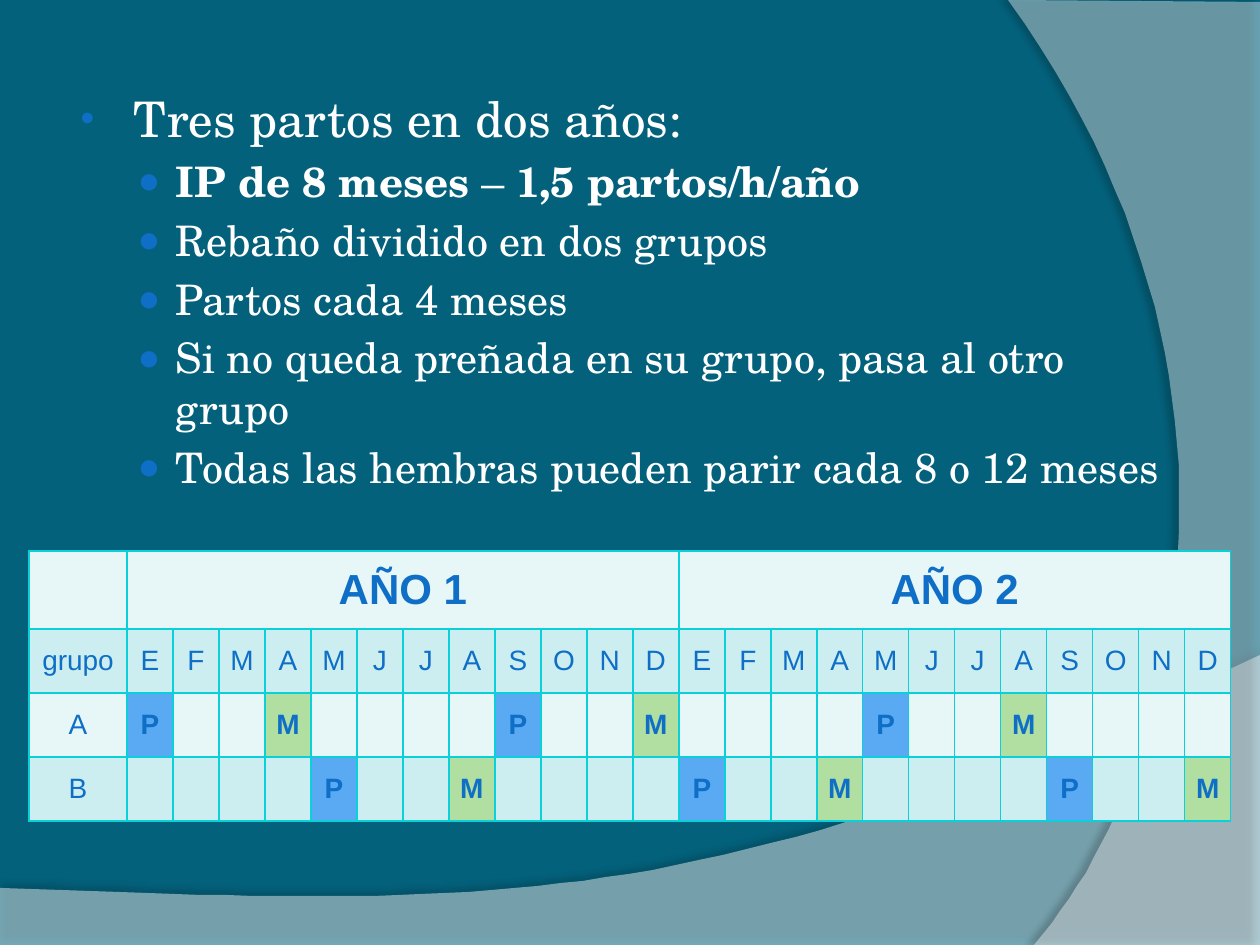
from lxml.etree import SubElement
from pptx import Presentation
from pptx.dml.color import RGBColor
from pptx.enum.text import MSO_ANCHOR, MSO_AUTO_SIZE, PP_ALIGN
from pptx.oxml.ns import qn
from pptx.util import Emu, Pt

SCALE = 914400 / 126  # EMU in one px
COLORS = {
    "background": "04617B", "white": "FFFFFF", "shadow": "000000",
    "blue": "0F6FC6", "border": "0BD0D9", "light": "E7F7F8",
    "band": "CCEEF1", "P": "59AAF2", "M": "B0DFA1",
}
BODY_FONT, TABLE_FONT = "TeX Gyre Schola", "Arial"


def px(length):
    return Emu(round(length * SCALE))


def color(name):
    return RGBColor.from_string(COLORS[name])


def child(parent, tag, **attributes):
    return SubElement(parent, qn(tag), {key: str(value) for key, value in attributes.items()})


def curve(start, control_1, control_2, end, steps=48):
    """Points along a cubic curve, without the start point."""
    points = []
    for step in range(1, steps + 1):
        t = step / steps
        weights = ((1 - t) ** 3, 3 * t * (1 - t) ** 2, 3 * t * t * (1 - t), t ** 3)
        corners = (start, control_1, control_2, end)
        points.append(tuple(sum(w * c[axis] for w, c in zip(weights, corners)) for axis in (0, 1)))
    return points


class SlideBuilder:
    def __init__(self, page):
        self.page = page
        page.background.fill.solid()
        page.background.fill.fore_color.rgb = color("background")

    def wave(self, points, opacity, shadow_opacity, distance, direction):
        builder = self.page.shapes.build_freeform(*points[0], scale=SCALE)
        builder.add_line_segments(points[1:], close=True)
        shape = builder.convert_to_shape()
        shape.shadow.inherit = False
        shape.line.fill.background()
        shape.fill.solid()
        shape.fill.fore_color.rgb = color("white")
        properties = shape.element.spPr
        fill_color = properties.find(qn("a:solidFill")).find(qn("a:srgbClr"))
        child(fill_color, "a:alpha", val=opacity * 1000)
        shadow = child(properties.find(qn("a:effectLst")), "a:outerShdw", blurRad=Pt(4),
                       dist=Pt(distance), dir=direction * 60000, algn="ctr", rotWithShape=0)
        shadow_color = child(shadow, "a:srgbClr", val=COLORS["shadow"])
        child(shadow_color, "a:alpha", val=shadow_opacity * 1000)

    def span(self, para, text, size, font, color_name, bold=False):
        span = para.add_run()
        span.text = text
        span.font.size = Pt(size)
        span.font.name = font
        span.font.bold = bold
        span.font.color.rgb = color(color_name)

    def bullets(self, box, left, top, width, height, items):
        box.left, box.top, box.width, box.height = map(px, (left, top, width, height))
        tree = box.element.getparent()
        tree.append(box.element)  # in front of the waves
        frame = box.text_frame
        frame.word_wrap = True
        frame.auto_size = MSO_AUTO_SIZE.NONE
        frame.vertical_anchor = MSO_ANCHOR.TOP
        for index, (level, spans) in enumerate(items):
            para = frame.paragraphs[0] if index == 0 else frame.add_paragraph()
            size, indent, hanging, mark, percent = (
                (24, 100, 38, "●", 90) if level else (28, 58, 53, "•", 80))
            para.level = level
            para.space_before = Pt(size * 0.2 if index else 0)
            properties = para._p.get_or_add_pPr()
            properties.set("marL", str(px(indent)))
            properties.set("indent", str(-px(hanging)))
            child(child(properties, "a:buClr"), "a:srgbClr", val=COLORS["blue"])
            child(properties, "a:buSzPct", val=percent * 1000)
            child(properties, "a:buFont", typeface=TABLE_FONT)
            child(properties, "a:buChar", char=mark)
            for text, bold in spans:
                self.span(para, text, size, BODY_FONT, "white", bold)

    def cell(self, cell, fill, text="", size=16, bold=False):
        properties = cell._tc.get_or_add_tcPr()
        for side in ("a:lnL", "a:lnR", "a:lnT", "a:lnB"):
            line = child(properties, side, w=Pt(1))
            child(child(line, "a:solidFill"), "a:srgbClr", val=COLORS["border"])
        cell.fill.solid()
        cell.fill.fore_color.rgb = color(fill)
        cell.margin_left = cell.margin_right = 0
        cell.vertical_anchor = MSO_ANCHOR.MIDDLE
        if text:
            para = cell.text_frame.paragraphs[0]
            para.alignment = PP_ALIGN.CENTER
            self.span(para, text, size, TABLE_FONT, "blue", bold)

    def table(self, left, top, columns, rows):
        frame = self.page.shapes.add_table(len(rows), len(columns), px(left), px(top),
                                           px(sum(columns)), px(sum(rows)))
        table = frame.table
        table.first_row = table.horz_banding = False
        for column, width in zip(table.columns, columns):
            column.width = px(width)
        for row, height in zip(table.rows, rows):
            row.height = px(height)
        return table


def main():
    deck = Presentation()
    deck.slide_width, deck.slide_height = px(1260), px(945)
    page = deck.slides.add_slide(deck.slide_layouts[1])
    title = page.shapes.title.element
    title.getparent().remove(title)
    slide = SlideBuilder(page)

    # Background waves
    lower_edge = curve((1260, 655), (704, 919), (493, 906), (0, 888))
    slide.wave([(0, 945), (1260, 945), (1260, 655)] + lower_edge, 45, 35, 3.5, 270)
    right_edge = curve((1034, 945), (1178, 780), (1283, 378), (1008, 0))
    slide.wave([(1260, 2), (1260, 945), (1034, 945)] + right_edge, 40, 45, 4, 180)

    # Bullet list
    slide.bullets(page.placeholders[1], 63, 82, 1134, 558, [
        (0, [("Tres partos en dos años:", False)]),
        (1, [("IP de 8 meses ", True), ("– ", False), ("1,5 partos/h/año", True)]),
        (1, [("Rebaño dividido en dos grupos", False)]),
        (1, [("Partos cada 4 meses", False)]),
        (1, [("Si no queda preñada en su grupo, pasa al otro grupo", False)]),
        (1, [("Todas las hembras pueden parir cada 8 o 12 meses", False)]),
    ])

    # Two-year calendar: year and month headings
    table = slide.table(29, 551, [98] + [46] * 24, [78, 64, 64, 64])
    years = {1: "AÑO 1", 13: "AÑO 2"}
    for column in range(25):
        slide.cell(table.cell(0, column), "light", years.get(column, ""), 24, True)
    for column in years:
        table.cell(0, column).merge(table.cell(0, column + 11))
    for column, text in enumerate(["grupo", *"EFMAMJJASOND" * 2]):
        slide.cell(table.cell(1, column), "band", text)

    # Each group: P every 8 months, M three months after each P
    for row, group, first, fill in ((2, "A", 0, "light"), (3, "B", 4, "band")):
        slide.cell(table.cell(row, 0), fill, group)
        for month in range(24):
            event = {0: "P", 3: "M"}.get((month - first) % 8, "")
            slide.cell(table.cell(row, month + 1), event or fill, event, bold=True)

    deck.save("out.pptx")


if __name__ == "__main__":
    main()
